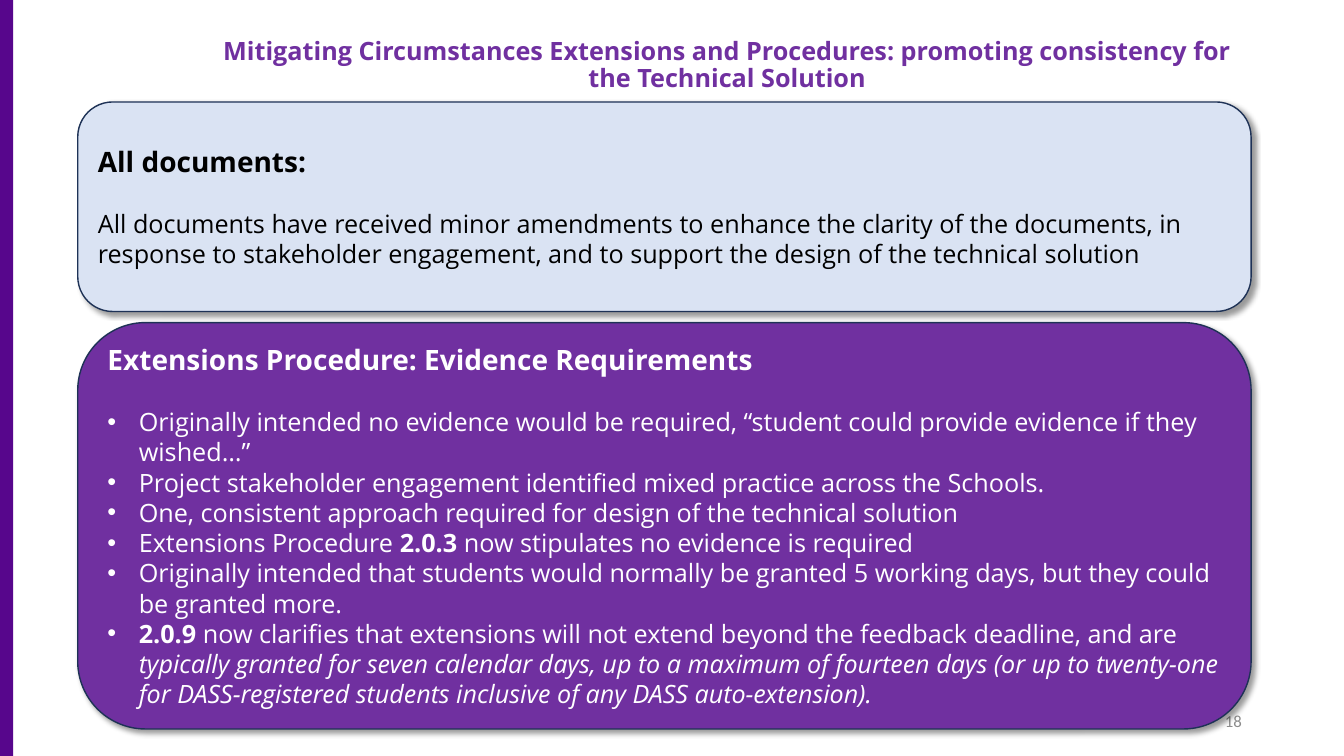
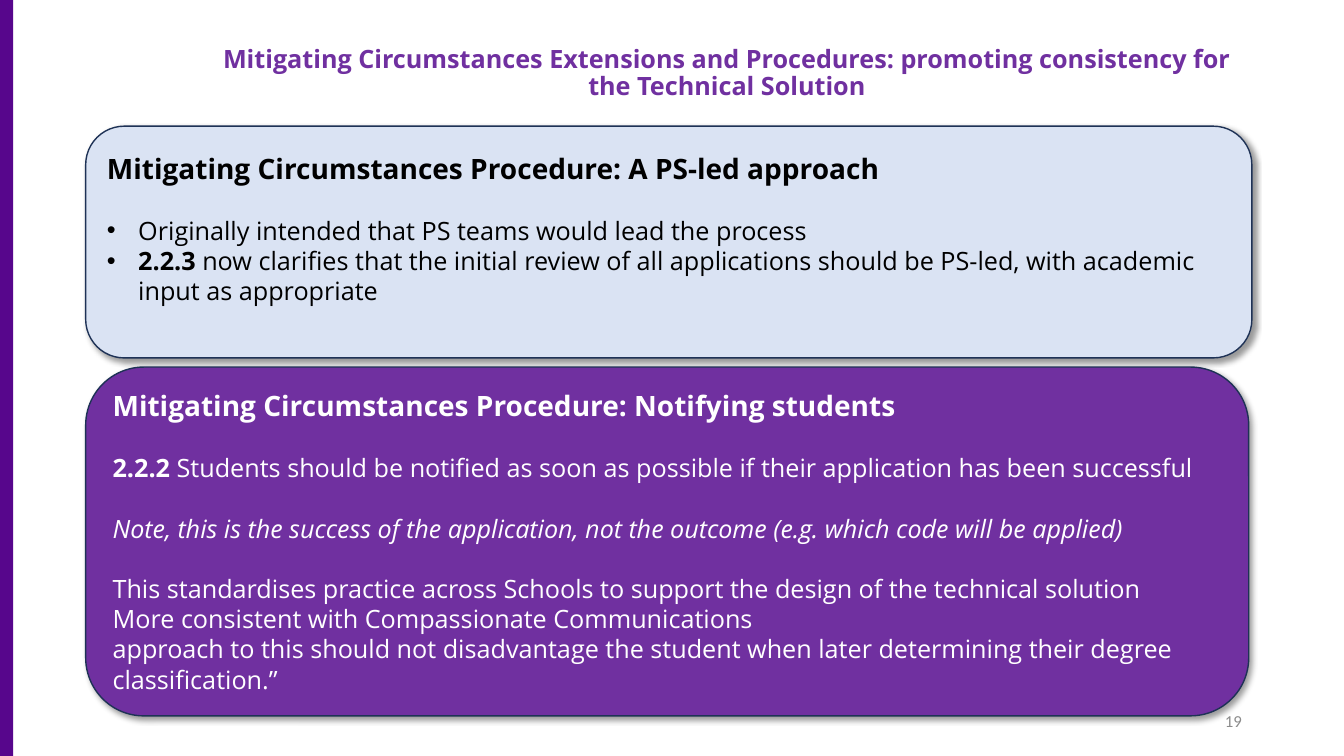
from dataclasses import dataclass
from typing import NamedTuple

from lxml.etree import SubElement
from pptx import Presentation
from pptx.dml.color import RGBColor
from pptx.enum.shapes import MSO_SHAPE
from pptx.enum.text import MSO_ANCHOR, PP_ALIGN
from pptx.oxml.ns import qn
from pptx.util import Cm, Pt


@dataclass(frozen=True)
class Theme:
    """Colours, fonts and type sizes shared by the slides."""

    purple: str = "7030A0"
    pale_blue: str = "DAE3F3"
    outline: str = "1E3256"
    band: str = "57068C"
    black: str = "000000"
    white: str = "FFFFFF"
    grey: str = "8C8C8C"
    text_font: str = "Open Sans"
    number_font: str = "Calibri"
    heading_size: int = 20
    body_size: int = 18
    number_size: int = 12
    section_gap: float = 21.6
    bullet_indent: float = 0.79


THEME = Theme()
SLIDE_WIDTH, SLIDE_HEIGHT = 33.87, 19.05
TITLE = ("Mitigating Circumstances Extensions and Procedures: "
         "promoting consistency for the Technical Solution")


class Box(NamedTuple):
    """Position and size in centimetres."""

    left: float
    top: float
    width: float
    height: float

    def lengths(self):
        """Return the four values as lengths."""
        return [Cm(value) for value in self]


class Run(NamedTuple):
    """A stretch of text with its emphasis."""

    text: str
    bold: bool = False
    italic: bool = False


class Line(NamedTuple):
    """A paragraph of a card."""

    runs: list
    bullet: bool = False
    gap: bool = False


class Card(NamedTuple):
    """A rounded panel with a heading and body lines."""

    box: Box
    fill: str
    ink: str
    heading: str
    lines: list
    foot: float = 0.13


def style(paragraph, size, colour, name=THEME.text_font, bold=False):
    """Set the font of a whole paragraph."""
    font = paragraph.font
    font.size, font.name, font.bold = Pt(size), name, bold
    font.color.rgb = RGBColor.from_string(colour)


def add_bullet(paragraph):
    """Give a paragraph a round bullet and a hanging indent."""
    properties = paragraph._p.get_or_add_pPr()
    indent = Cm(THEME.bullet_indent)
    properties.set("marL", str(indent))
    properties.set("indent", str(-indent))
    SubElement(properties, qn("a:buFont"), typeface="Arial")
    SubElement(properties, qn("a:buChar"), char="•")


def add_shadow(shape):
    """Cast a soft shadow to the lower right."""
    effects = SubElement(shape._element.spPr, qn("a:effectLst"))
    shadow = SubElement(effects, qn("a:outerShdw"), blurRad=str(Pt(4)),
                        dist=str(Pt(3)), dir="2700000", algn="tl",
                        rotWithShape="0")
    colour = SubElement(shadow, qn("a:srgbClr"), val=THEME.black)
    SubElement(colour, qn("a:alpha"), val="40000")


def add_label(slide, box, text, align):
    """Place a one-paragraph text box and return its paragraph."""
    frame = slide.shapes.add_textbox(*box.lengths()).text_frame
    frame.word_wrap = True
    frame.vertical_anchor = MSO_ANCHOR.MIDDLE
    paragraph = frame.paragraphs[0]
    paragraph.text, paragraph.alignment = text, align
    return paragraph


def add_title(slide, box):
    """Place the shared title."""
    title = add_label(slide, box, TITLE, PP_ALIGN.CENTER)
    title.line_spacing = 0.9
    style(title, THEME.body_size, THEME.purple, bold=True)


def add_page_number(slide, number):
    """Place the page number at the lower right."""
    label = add_label(slide, Box(23.93, 17.65, 7.62, 1.02), str(number), PP_ALIGN.RIGHT)
    style(label, THEME.number_size, THEME.grey, THEME.number_font)


def add_band(slide):
    """Draw the band along the left edge."""
    band = slide.shapes.add_shape(MSO_SHAPE.RECTANGLE,
                                  *Box(0, 0, 0.33, SLIDE_HEIGHT).lengths())
    band.shadow.inherit = False
    band.fill.solid()
    band.fill.fore_color.rgb = RGBColor.from_string(THEME.band)
    band.line.fill.background()


def add_line(frame, line, ink):
    """Append one body paragraph to a card."""
    paragraph = frame.add_paragraph()
    paragraph.alignment = PP_ALIGN.LEFT
    if line.gap:
        paragraph.space_before = Pt(THEME.section_gap)
    if line.bullet:
        add_bullet(paragraph)
    style(paragraph, THEME.body_size, ink)
    for part in line.runs:
        run = paragraph.add_run()
        run.text = part.text
        if part.bold:
            run.font.bold = True
        if part.italic:
            run.font.italic = True


def add_card(slide, card):
    """Draw a rounded panel with its text."""
    panel = slide.shapes.add_shape(MSO_SHAPE.ROUNDED_RECTANGLE, *card.box.lengths())
    panel.fill.solid()
    panel.fill.fore_color.rgb = RGBColor.from_string(card.fill)
    panel.line.color.rgb = RGBColor.from_string(THEME.outline)
    panel.line.width = Pt(1)
    add_shadow(panel)
    frame = panel.text_frame
    frame.word_wrap = True
    frame.vertical_anchor = MSO_ANCHOR.MIDDLE
    frame.margin_bottom = Cm(card.foot)
    heading = frame.paragraphs[0]
    heading.text, heading.alignment = card.heading, PP_ALIGN.LEFT
    style(heading, THEME.heading_size, card.ink, bold=True)
    for line in card.lines:
        add_line(frame, line, card.ink)


def add_slide(deck, number, title_box, cards):
    """Build a slide from its title position and cards."""
    slide = deck.slides.add_slide(deck.slide_layouts[6])
    add_page_number(slide, number)
    for card in cards:
        add_card(slide, card)
    add_title(slide, title_box)
    add_band(slide)


EVIDENCE_CARDS = [
    Card(Box(1.96, 2.57, 29.57, 5.28), THEME.pale_blue, THEME.black, "All documents:", [
        Line([Run("All documents have received minor amendments to enhance the clarity of "
                  "the documents, in response to stakeholder engagement, and to support "
                  "the design of the technical solution")], gap=True),
    ]),
    Card(Box(1.96, 8.13, 29.57, 10.24), THEME.purple, THEME.white,
         "Extensions Procedure: Evidence Requirements", [
        Line([Run("Originally intended no evidence would be required, “student could "
                  "provide evidence if they wished…”")], bullet=True, gap=True),
        Line([Run("Project stakeholder engagement identified mixed practice across "
                  "the Schools.")], bullet=True),
        Line([Run("One, consistent approach required for design of the technical "
                  "solution")], bullet=True),
        Line([Run("Extensions Procedure "), Run("2.0.3", bold=True),
              Run(" now stipulates no evidence is required")], bullet=True),
        Line([Run("Originally intended that students would normally be granted 5 working "
                  "days, but they could be granted more.")], bullet=True),
        Line([Run("2.0.9 ", bold=True),
              Run("now clarifies that extensions will not extend beyond the feedback "
                  "deadline, and are "),
              Run("typically granted for seven calendar days, up to a maximum of fourteen "
                  "days (or up to twenty-one for DASS-registered students inclusive of "
                  "any DASS auto-extension).", italic=True)], bullet=True),
    ]),
]

NOTIFYING_CARDS = [
    Card(Box(2.16, 3.18, 29.39, 5.84), THEME.pale_blue, THEME.black,
         "Mitigating Circumstances Procedure: A PS-led approach", [
        Line([Run("Originally intended that PS teams would lead the process")],
             bullet=True, gap=True),
        Line([Run("2.2.3", bold=True),
              Run(" now clarifies that the initial review of all applications should be "
                  "PS-led, with academic input as appropriate")], bullet=True),
    ], foot=0.81),
    Card(Box(2.16, 9.25, 29.31, 8.79), THEME.purple, THEME.white,
         "Mitigating Circumstances Procedure: Notifying students", [
        Line([Run("2.2.2 ", bold=True),
              Run("Students should be notified as soon as possible if their application "
                  "has been successful")], gap=True),
        Line([Run("Note, this is the success of the application, not the outcome (e.g. "
                  "which code will be applied)", italic=True)], gap=True),
        Line([Run("This standardises practice across Schools to support the design of "
                  "the technical solution")], gap=True),
        Line([Run("More consistent with Compassionate Communications")]),
        Line([Run("approach to this should not disadvantage the student when later "
                  "determining their degree classification.”")]),
    ]),
]


def main():
    """Build and save the deck."""
    deck = Presentation()
    deck.slide_width, deck.slide_height = Cm(SLIDE_WIDTH), Cm(SLIDE_HEIGHT)
    add_slide(deck, 18, Box(5.13, 1.02, 26.39, 1.27), EVIDENCE_CARDS)
    add_slide(deck, 19, Box(5.11, 1.02, 26.42, 1.68), NOTIFYING_CARDS)
    deck.save("out.pptx")


if __name__ == "__main__":
    main()
